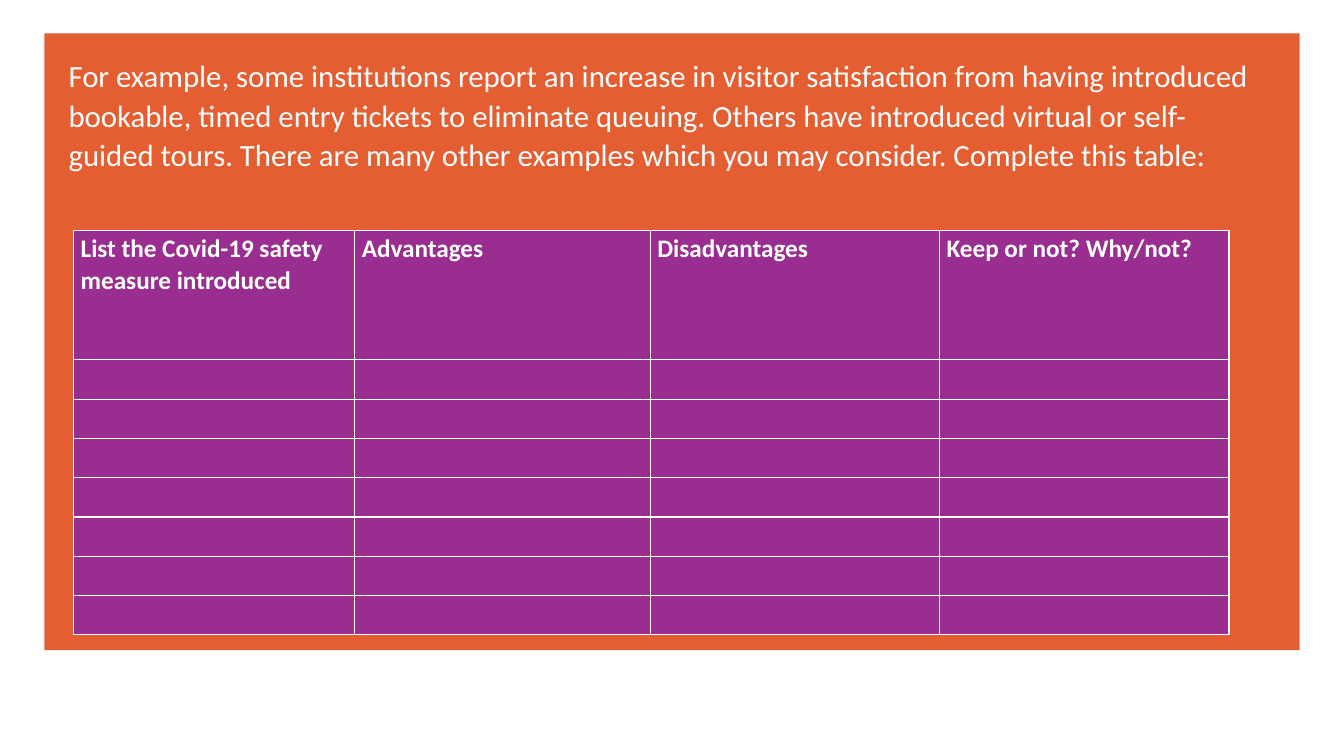
import pptx
import pptx.dml.color
import pptx.enum.shapes
import pptx.enum.text
import pptx.oxml.ns
import pptx.util
from lxml import etree

PX = 9144  # 100 px to the inch
WHITE, ORANGE, PURPLE = "FFFFFF", "E45E32", "9A2E90"
INTRO = (
    "For example, some institutions report an increase in visitor satisfaction "
    "from having introduced bookable, timed entry tickets to eliminate queuing. "
    "Others have introduced virtual or self-guided tours. There are many other "
    "examples which you may consider. Complete this table:"
)
HEADS = [
    "List the Covid-19 safety measure introduced",
    "Advantages",
    "Disadvantages",
    "Keep or not? Why/not?",
]
WIDTHS = [279, 293, 287, 287]
HEIGHTS = [128] + [39] * 7


def px(*sizes):
    return [pptx.util.Emu(size * PX) for size in sizes]


def color(code):
    return pptx.dml.color.RGBColor.from_string(code)


def paint(fill, code):
    fill.solid()
    fill.fore_color.rgb = color(code)


def apply(target, values):
    for name, value in values.items():
        setattr(target, name, value)


def child(parent, tag, **values):
    return etree.SubElement(parent, pptx.oxml.ns.qn(tag), **values)


def style(para, size, bold=False):
    apply(para, {"line_spacing": 1.07, "space_after": pptx.util.Pt(8)})
    apply(para.font, {"name": "Calibri", "size": pptx.util.Pt(size), "bold": bold})
    para.font.color.rgb = color(WHITE)


def panel(slide, *box):
    shape = slide.shapes.add_shape(pptx.enum.shapes.MSO_SHAPE.RECTANGLE, *px(*box))
    shape.shadow.inherit = False
    paint(shape.fill, ORANGE)
    shape.line.fill.background()
    return shape


def intro(body, *box):
    apply(body, dict(zip(("left", "top", "width", "height"), px(*box))))
    frame = body.text_frame
    frame.text = INTRO
    frame.auto_size = pptx.enum.text.MSO_AUTO_SIZE.NONE
    para = frame.paragraphs[0]
    props = para._p.get_or_add_pPr()
    props.set("marL", "0")
    props.set("indent", "0")
    child(props, "a:buNone")
    para.space_before = pptx.util.Pt(0)
    style(para, 22)


def border(cell):
    props = cell._tc.get_or_add_tcPr()
    for side in "LRTB":
        line = child(props, "a:ln" + side, w=str(pptx.util.Pt(1)))
        fill = child(line, "a:solidFill")
        child(fill, "a:srgbClr", val=WHITE)


def table(slide, left, top):
    box = px(left, top, sum(WIDTHS), sum(HEIGHTS))
    grid = slide.shapes.add_table(len(HEIGHTS), len(WIDTHS), *box).table
    for col, width in zip(grid.columns, px(*WIDTHS)):
        col.width = width
    for row, height in zip(grid.rows, px(*HEIGHTS)):
        row.height = height
    side, none = px(7, 0)
    for cell in grid.iter_cells():
        apply(cell, {"margin_left": side, "margin_right": side,
                     "margin_top": none, "margin_bottom": none})
        border(cell)
        paint(cell.fill, PURPLE)
    for cell, head in zip(grid.rows[0].cells, HEADS):
        cell.text = head
        style(cell.text_frame.paragraphs[0], 18, bold=True)


def main():
    deck = pptx.Presentation()
    deck.slide_width, deck.slide_height = px(1333, 750)
    slide = deck.slides.add_slide(deck.slide_layouts[1])
    title = slide.shapes.title.element
    title.getparent().remove(title)
    body = slide.placeholders[1]
    back = panel(slide, 44, 33, 1245, 612)
    body.element.addprevious(back.element)
    intro(body, 58, 49, 1203, 453)
    table(slide, 73, 229)
    deck.save("out.pptx")


if __name__ == "__main__":
    main()
